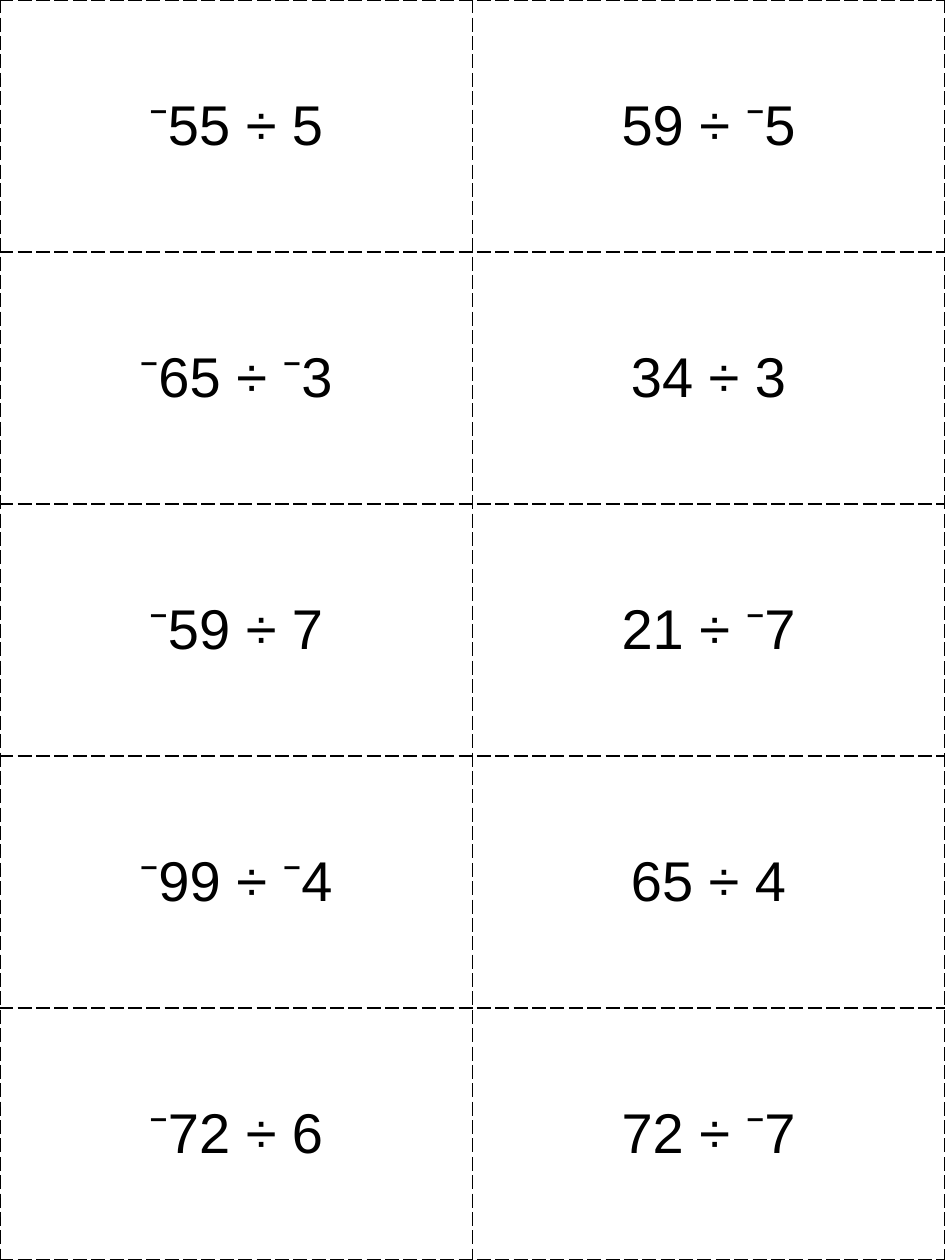
from dataclasses import dataclass

from lxml import etree
from pptx import Presentation
from pptx.dml.color import RGBColor
from pptx.enum.text import MSO_ANCHOR, PP_ALIGN
from pptx.oxml.ns import qn
from pptx.util import Emu, Pt

PX = 914400 // 126
CENTER = PP_ALIGN.CENTER
MIDDLE = MSO_ANCHOR.MIDDLE
BLANK_LAYOUT = 6

PAGE_WIDTH, PAGE_HEIGHT = 945, 1260

DIVISIONS = [
    ("⁻55 ÷ 5", "59 ÷ ⁻5"),
    ("⁻65 ÷ ⁻3", "34 ÷ 3"),
    ("⁻59 ÷ 7", "21 ÷ ⁻7"),
    ("⁻99 ÷ ⁻4", "65 ÷ 4"),
    ("⁻72 ÷ 6", "72 ÷ ⁻7"),
]


@dataclass(frozen=True)
class Theme:
    font: str = "Arial"
    ink: str = "000000"
    question_size: int = 32
    cut_line_width: int = 1
    cut_line_dash: str = "lgDash"


def px(length):
    return Emu(length * PX)


class CardSheet:
    """Holds the theme and the current slide."""

    def __init__(self, slide, theme):
        self.slide = slide
        self.theme = theme

    def cards(self, rows, left, top, width, height):
        """Add a table of equal cards, one question in each."""
        columns = len(rows[0])
        frame = self.slide.shapes.add_table(
            len(rows), columns, px(left), px(top), px(width), px(height))
        table = frame.table
        table.first_row = False
        table.horz_banding = False
        for row, questions in zip(table.rows, rows):
            for cell, question in zip(row.cells, questions):
                self.card(cell, question)

    def card(self, cell, question):
        self.cut_lines(cell)
        cell.fill.background()
        cell.vertical_anchor = MIDDLE
        cell.text = question
        paragraph = cell.text_frame.paragraphs[0]
        paragraph.alignment = CENTER
        paragraph.font.name = self.theme.font
        paragraph.font.size = Pt(self.theme.question_size)
        paragraph.font.color.rgb = RGBColor.from_string(self.theme.ink)

    def cut_lines(self, cell):
        """Draw dashed borders; they must come before the cell's fill."""
        properties = cell._tc.get_or_add_tcPr()
        for side in ("lnL", "lnR", "lnT", "lnB"):
            line = etree.SubElement(properties, qn(f"a:{side}"),
                                    w=str(Pt(self.theme.cut_line_width)))
            fill = etree.SubElement(line, qn("a:solidFill"))
            etree.SubElement(fill, qn("a:srgbClr"), val=self.theme.ink)
            etree.SubElement(line, qn("a:prstDash"),
                             val=self.theme.cut_line_dash)


def main():
    deck = Presentation()
    deck.slide_width, deck.slide_height = px(PAGE_WIDTH), px(PAGE_HEIGHT)
    slide = deck.slides.add_slide(deck.slide_layouts[BLANK_LAYOUT])
    sheet = CardSheet(slide, Theme())
    sheet.cards(DIVISIONS, 0, 0, PAGE_WIDTH, PAGE_HEIGHT)
    deck.save("out.pptx")


if __name__ == "__main__":
    main()
